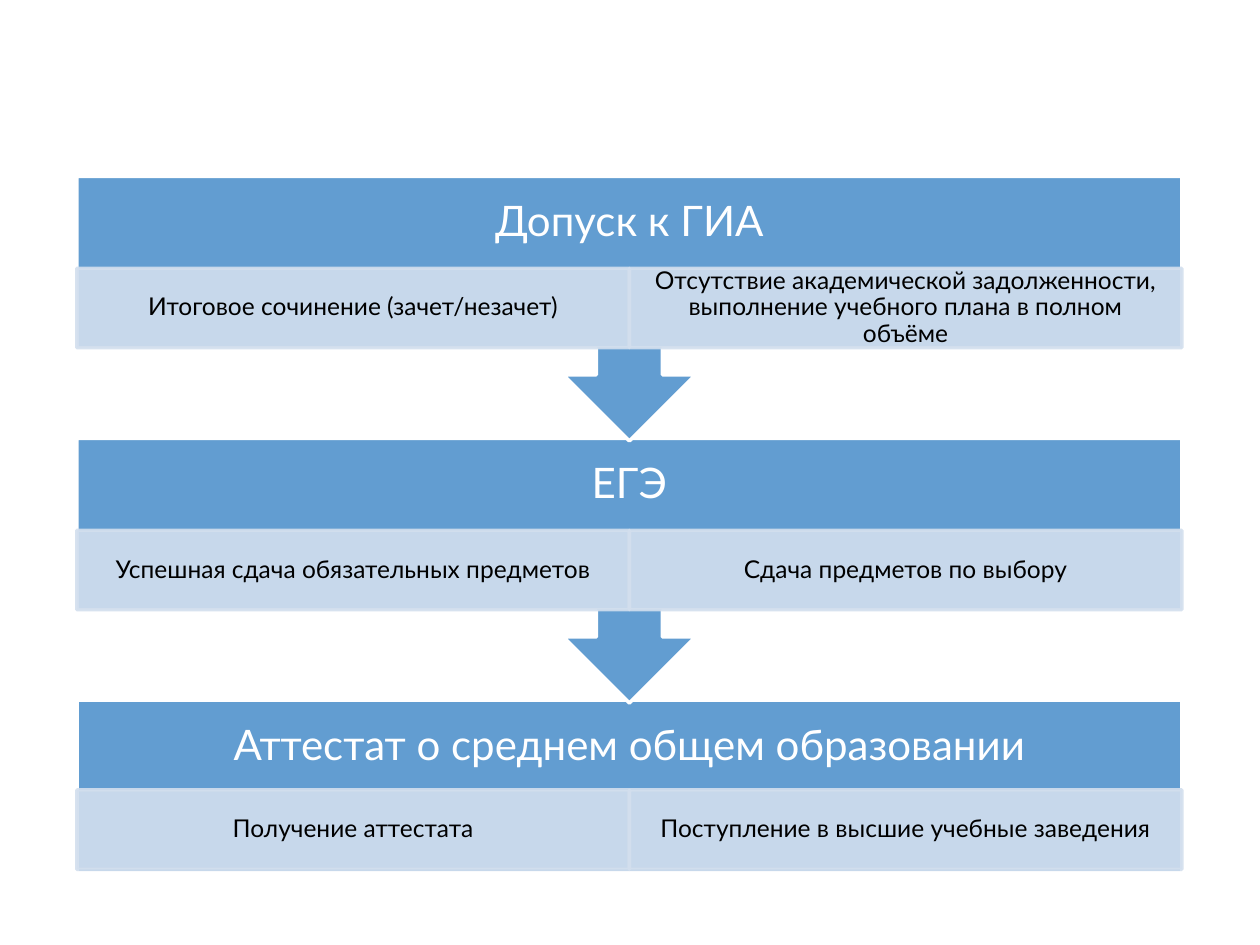
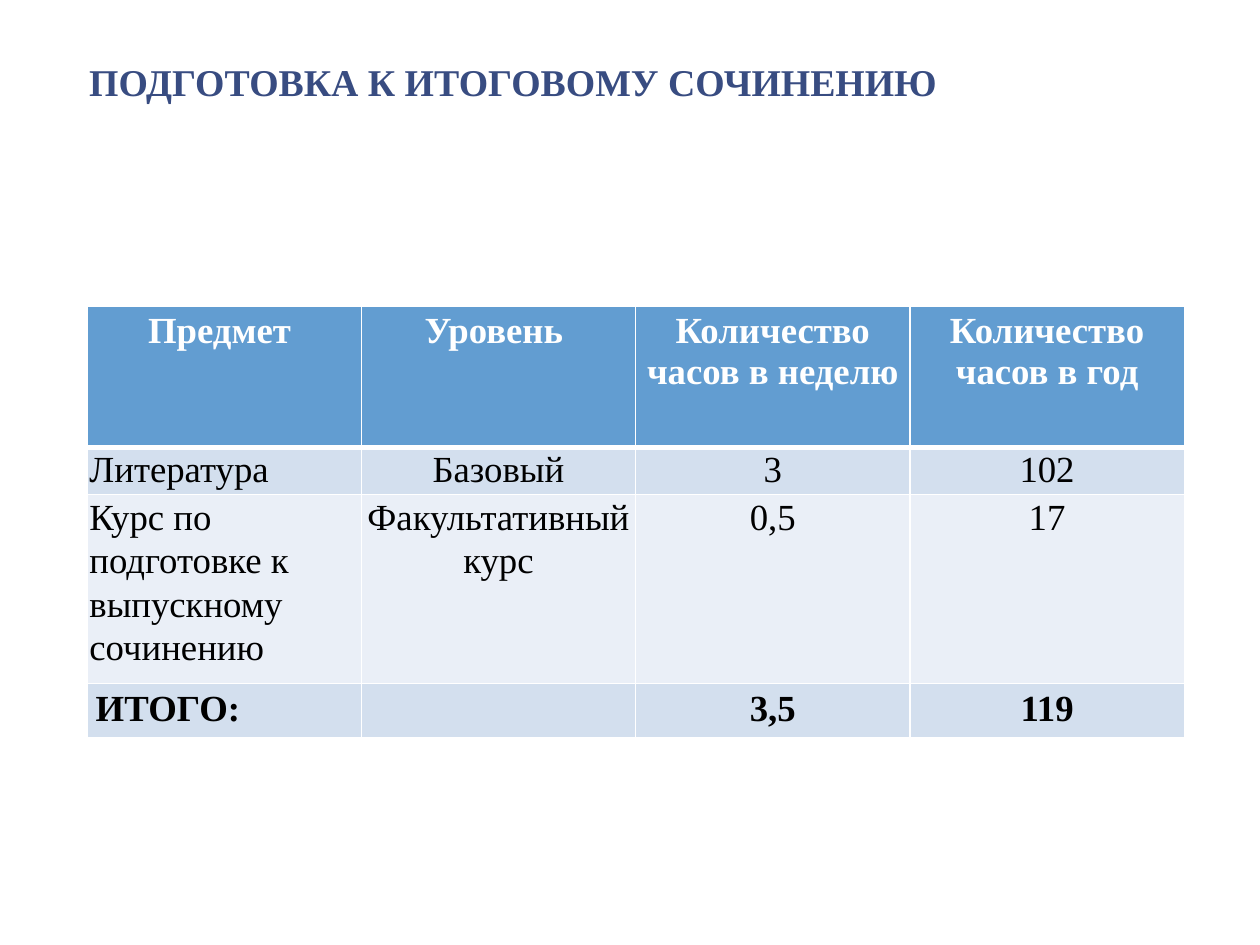
from pptx import Presentation
from pptx import util as u
from pptx.dml.color import RGBColor
from pptx.enum import shapes, text
from pptx.oxml import parse_xml
from pptx.oxml.ns import nsdecls, qn
from lxml import etree

# Shared look
HUES = {"blue": "629DD1", "pale": "D3DFEE", "light": "EAEFF7",
        "navy": "384C81", "white": "FFFFFF", "black": "000000"}
SANS, SERIF = "Lato", "Times New Roman"
MID, LEFT = text.PP_ALIGN.CENTER, text.PP_ALIGN.LEFT

# Step chart: left edge, width, first top, distance between steps
EDGE, WIDE, TOP, PITCH = 0.61, 8.77, 1.4, 2.08
STEPS = [
    ("Допуск к ГИА", "Итоговое сочинение (зачет/незачет)",
     "Отсутствие академической задолженности, выполнение учебного плана в полном объёме"),
    ("ЕГЭ", "Успешная сдача обязательных предметов", "Сдача предметов по выбору"),
    ("Аттестат о среднем общем образовании", "Получение аттестата",
     "Поступление в высшие учебные заведения"),
]

# Table of hours
HOURS = [
    ("Предмет ", "Уровень ", "Количество часов в неделю", "Количество часов в год"),
    ("Литература", "Базовый", "3", "102"),
    ("Курс по подготовке к выпускному сочинению", "Факультативный курс", "0,5", "17"),
    ("ИТОГО:", "", "3,5", "119"),
]
TALL = (1.12, 0.37, 1.5, 0.42)
FILLS = ("blue", "pale", "light", "pale")


def color(name):
    return RGBColor.from_string(HUES[name])


def write(frame, words, face, size, hue, bold=False, align=MID, gap=None):
    """Put one styled paragraph into a text frame."""
    frame.text = words
    para = frame.paragraphs[0]
    para.alignment = align
    if gap:
        para.line_spacing = gap
    for run in para.runs:
        font = run.font
        font.name, font.size, font.bold = face, u.Pt(size), bold
        font.color.rgb = color(hue)


def inset(frame, side, edge):
    frame.word_wrap = True
    frame.vertical_anchor = text.MSO_ANCHOR.MIDDLE
    frame.margin_left = frame.margin_right = u.Inches(side)
    frame.margin_top = frame.margin_bottom = u.Inches(edge)


def label(slide, box, words, pad, *style, **more):
    frame = slide.shapes.add_textbox(*map(u.Inches, box)).text_frame
    inset(frame, *pad)
    write(frame, words, *style, **more)


def block(slide, kind, box, fill, line, alpha=None):
    """Add a filled preset shape, see-through if alpha is given."""
    shape = slide.shapes.add_shape(kind, *map(u.Inches, box))
    shape.shadow.inherit = False
    shape.fill.solid()
    shape.fill.fore_color.rgb = color(fill)
    shape.line.color.rgb = color(line)
    shape.line.width = u.Pt(2)
    if alpha:
        for tint in shape.element.spPr.iter(qn("a:srgbClr")):
            etree.SubElement(tint, qn("a:alpha")).set("val", str(alpha * 1000))
    return shape


def step(slide, top, head, parts, last):
    """Draw one step: a headed band, its two cells and an arrow unless last."""
    kind = shapes.MSO_SHAPE.RECTANGLE if last else shapes.MSO_SHAPE.UP_ARROW_CALLOUT
    band = block(slide, kind, (EDGE, top, WIDE, 1.37 if last else 2.1), "blue", "white")
    band.rotation = 0 if last else 180
    label(slide, (EDGE, top, WIDE, 0.74), head, (0.19, 0.19),
          SANS, 24, "white", gap=0.9)
    half = WIDE / 2
    drop = 0.71 if last else 0.73
    for col, words in enumerate(parts):
        cell = block(slide, shapes.MSO_SHAPE.RECTANGLE,
                     (EDGE + col * half, top + drop, half, 0.63), "pale", "pale", 90)
        inset(cell.text_frame, 0.11, 0.02)
        write(cell.text_frame, words, SANS, 14, "black", gap=0.9)


def border(cell, low):
    """Draw white cell borders; low is the width of the bottom one."""
    props = cell._tc.get_or_add_tcPr()
    for spot, (side, width) in enumerate((("L", 1), ("R", 1), ("T", 1), ("B", low))):
        props.insert(spot, parse_xml(
            f'<a:ln{side} {nsdecls("a")} w="{u.Pt(width)}"><a:solidFill>'
            f'<a:srgbClr val="{HUES["white"]}"/></a:solidFill></a:ln{side}>'))


def grid(slide, box):
    table = slide.shapes.add_table(len(HOURS), len(HOURS[0]),
                                   *map(u.Inches, box)).table
    for col in table.columns:
        col.width = u.Inches(box[2] / len(HOURS[0]))
    for row, words in enumerate(HOURS):
        table.rows[row].height = u.Inches(TALL[row])
        head = row == 0
        strong = row in (0, len(HOURS) - 1)
        side, edge = (0.07, 0.04) if strong else (0.02, 0)
        for col, word in enumerate(words):
            cell = table.cell(row, col)
            cell.fill.solid()
            cell.fill.fore_color.rgb = color(FILLS[row])
            cell.margin_left = cell.margin_right = u.Inches(side)
            cell.margin_top = cell.margin_bottom = u.Inches(edge)
            write(cell.text_frame, word, SERIF, 21, "white" if head else "black",
                  bold=strong, align=MID if head or col else LEFT,
                  gap=None if strong else 1.07)
            border(cell, 3 if head or row == 1 and False else 1)
            if row == 1:
                cell._tc.tcPr.find(qn("a:lnT")).set("w", str(u.Pt(3)))


def main():
    deck = Presentation()
    deck.slide_width, deck.slide_height = u.Inches(10), u.Inches(7.5)
    blank = deck.slide_layouts[6]

    # Path to the certificate, lowest step at the back
    flow = deck.slides.add_slide(blank)
    for spot, (head, *parts) in reversed(list(enumerate(STEPS))):
        step(flow, TOP + spot * PITCH, head, parts, spot == len(STEPS) - 1)

    # Hours of essay preparation
    essay = deck.slides.add_slide(blank)
    label(essay, (0.61, 0.3, 7.44, 0.69), "ПОДГОТОВКА К ИТОГОВОМУ СОЧИНЕНИЮ",
          (0.1, 0.05), SERIF, 21.6, "navy", bold=True, align=LEFT)
    grid(essay, (0.69, 2.43, 8.71, sum(TALL)))

    deck.save("out.pptx")


if __name__ == "__main__":
    main()
